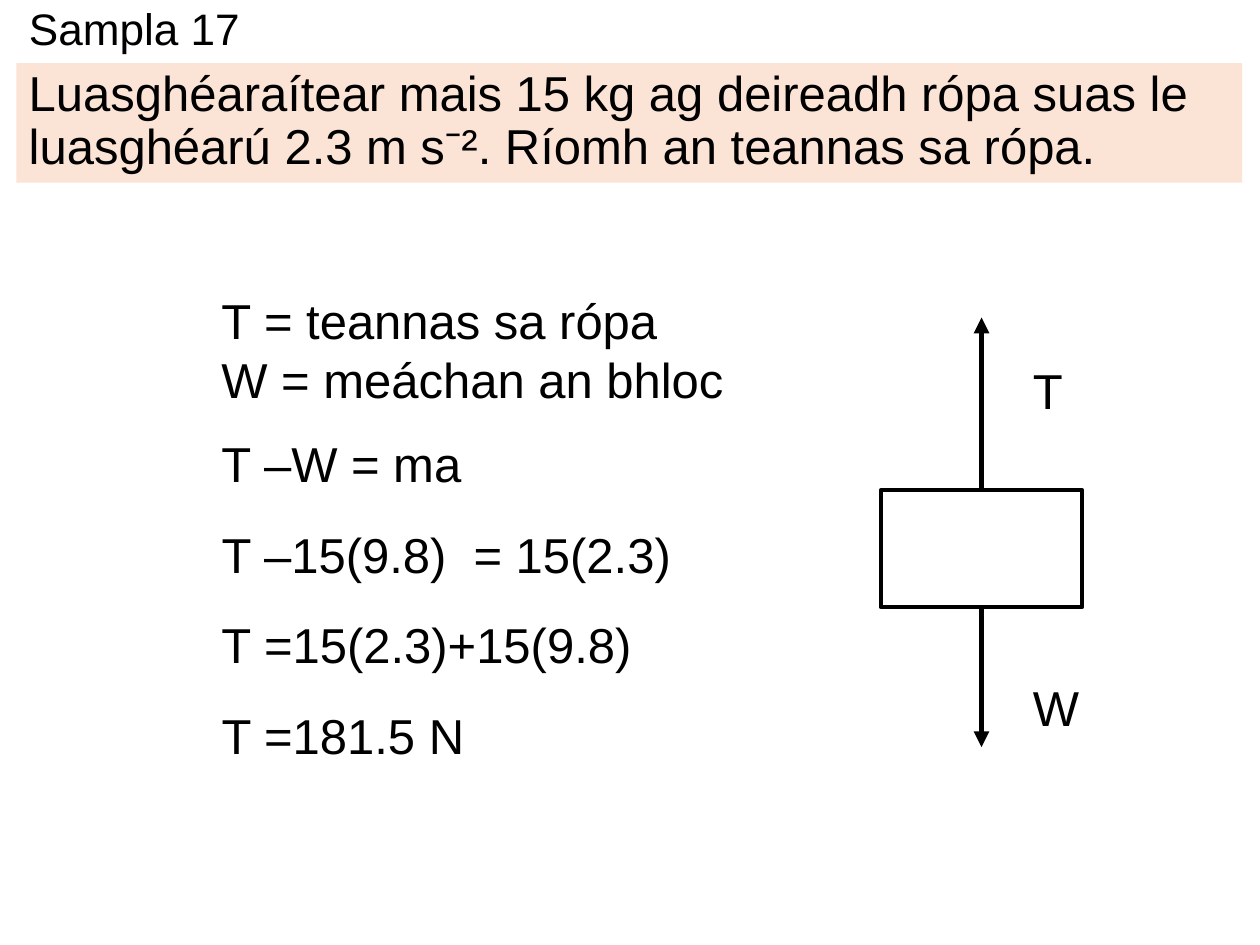
"""Builds a worked example on the tension in a rope lifting a block."""
from pptx import Presentation
from pptx.dml.color import RGBColor
from pptx.enum.shapes import MSO_CONNECTOR, MSO_SHAPE
from pptx.enum.text import MSO_ANCHOR, MSO_AUTO_SIZE, PP_ALIGN
from pptx.oxml.ns import qn
from pptx.util import Inches, Pt
from lxml.etree import SubElement

COLORS = {"ink": "000000", "paper": "FFFFFF", "question": "FBE3D6"}


class SlideBuilder:
    """Holds the text style and the current slide."""

    def __init__(self, slide, font="Arial", size=28):
        self.slide, self.font, self.size = slide, font, size

    def color(self, name):
        """Returns a named colour."""
        return RGBColor.from_string(COLORS[name])

    def add_runs(self, p, lines, size=None):
        """Adds one run per line, with line breaks between them."""
        p.alignment = PP_ALIGN.LEFT
        for i, line in enumerate(lines):
            if i:
                p.add_line_break()
            r = p.add_run()
            r.text = line
            r.font.name = self.font
            r.font.size = Pt(size or self.size)
            r.font.color.rgb = self.color("ink")

    def title(self, text, left, top, width, height, size):
        """Moves and fills the title placeholder."""
        s = self.slide.shapes.title
        s.left, s.top, s.width, s.height = map(Inches, (left, top, width, height))
        tf = s.text_frame
        tf.word_wrap = True
        tf.auto_size = MSO_AUTO_SIZE.NONE
        tf.vertical_anchor = MSO_ANCHOR.MIDDLE
        p = tf.paragraphs[0]
        p.line_spacing = 0.9
        self.add_runs(p, [text], size)

    def text(self, lines, left, top, width, height=0.57):
        """Adds an unwrapped text box."""
        s = self.slide.shapes.add_textbox(*map(Inches, (left, top, width, height)))
        tf = s.text_frame
        tf.word_wrap = False
        tf.auto_size = MSO_AUTO_SIZE.SHAPE_TO_FIT_TEXT
        self.add_runs(tf.paragraphs[0], lines)

    def rect(self, left, top, width, height, fill, line_width=0):
        """Adds a rectangle, outlined when a line width is given."""
        s = self.slide.shapes.add_shape(
            MSO_SHAPE.RECTANGLE, *map(Inches, (left, top, width, height)))
        s.shadow.inherit = False
        s.fill.solid()
        s.fill.fore_color.rgb = self.color(fill)
        if line_width:
            s.line.color.rgb = self.color("ink")
            s.line.width = Pt(line_width)
        else:
            s.line.fill.background()
        return s

    def panel(self, text, left, top, width, height, fill):
        """Adds a filled rectangle with wrapped text."""
        tf = self.rect(left, top, width, height, fill).text_frame
        tf.word_wrap = True
        tf.vertical_anchor = MSO_ANCHOR.TOP
        p = tf.paragraphs[0]
        p.line_spacing = 0.9
        p.space_before = Pt(10)
        self.add_runs(p, [text])

    def force(self, block, site, end_y):
        """Adds a vertical arrow from a side of the block."""
        x = block.left + block.width // 2
        c = self.slide.shapes.add_connector(
            MSO_CONNECTOR.STRAIGHT, x, block.top, x, Inches(end_y))
        c.begin_connect(block, site)
        c.line.color.rgb = self.color("ink")
        c.line.width = Pt(3)
        sp_pr = c._element.spPr
        SubElement(sp_pr.find(qn("a:ln")), qn("a:tailEnd"), type="triangle")
        SubElement(sp_pr, qn("a:effectLst"))


def main():
    """Builds and saves the slide."""
    prs = Presentation()
    prs.slide_width, prs.slide_height = Inches(10), Inches(7.5)
    b = SlideBuilder(prs.slides.add_slide(prs.slide_layouts[5]))

    b.title("Sampla 17", 0.13, 0, 7.23, 0.5, size=25.2)
    b.panel("Luasghéaraítear mais 15 kg ag deireadh rópa suas le "
            "luasghéarú 2.3 m s⁻². Ríomh an teannas sa rópa.",
            0.13, 0.5, 9.73, 0.95, "question")

    b.text(["T = teannas sa rópa", "W = meáchan an bhloc"], 1.66, 2.26, 4.24, 1.04)
    steps = [("T –W = ma", 2.13), ("T –15(9.8)  = 15(2.3)", 3.81),
             ("T =15(2.3)+15(9.8)", 3.5), ("T =181.5 N", 2.15)]
    for i, (step, width) in enumerate(steps):
        b.text([step], 1.66, 3.39 + 0.72 * i, width)

    block = b.rect(6.99, 3.89, 1.6, 0.93, "paper", line_width=2.25)
    b.force(block, 0, 2.52)
    b.force(block, 2, 5.93)
    b.text(["T"], 8.1, 2.81, 0.44)
    b.text(["W"], 8.1, 5.33, 0.57)

    prs.save("out.pptx")


if __name__ == "__main__":
    main()
